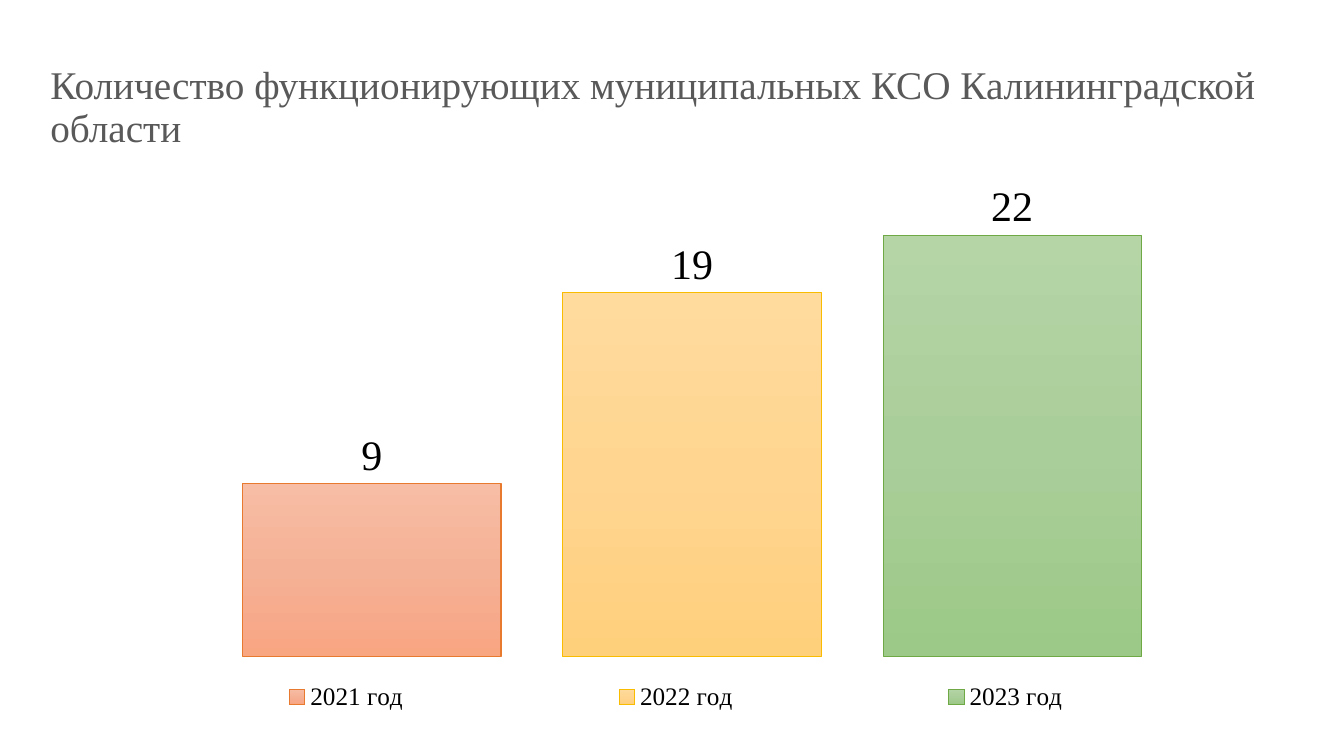
from copy import deepcopy

from lxml import etree
from pptx import Presentation
from pptx.chart.data import CategoryChartData
from pptx.dml.color import RGBColor
from pptx.enum.chart import XL_CHART_TYPE, XL_LABEL_POSITION, XL_LEGEND_POSITION
from pptx.enum.text import MSO_ANCHOR, MSO_AUTO_SIZE, PP_ALIGN
from pptx.oxml.ns import qn
from pptx.util import Inches, Pt

COLUMN_CLUSTERED = XL_CHART_TYPE.COLUMN_CLUSTERED
OUTSIDE_END = XL_LABEL_POSITION.OUTSIDE_END
LEGEND_BOTTOM = XL_LEGEND_POSITION.BOTTOM
MIDDLE = MSO_ANCHOR.MIDDLE
NO_AUTOSIZE = MSO_AUTO_SIZE.NONE
LEFT = PP_ALIGN.LEFT

FONT = "Times New Roman"
COLORS = {"title": "595959", "text": "000000"}
YEARS = [
    ("2021 год", 9, ["F7BDA5", "F5B196", "F8A582"], "E87A30"),
    ("2022 год", 19, ["FFDB9E", "FFD590", "FFD07C"], "F9BC00"),
    ("2023 год", 22, ["B5D5A7", "AACE9A", "9CC987"], "6EA945"),
]


def write_text(shape, text, size, color, align=LEFT, line_spacing=1.0):
    frame = shape.text_frame
    frame.word_wrap = True
    frame.auto_size = NO_AUTOSIZE
    frame.vertical_anchor = MIDDLE
    paragraph = frame.paragraphs[0]
    paragraph.alignment = align
    paragraph.line_spacing = line_spacing
    run = paragraph.add_run()
    run.text = text
    run.font.name = FONT
    run.font.size = Pt(size)
    run.font.color.rgb = RGBColor.from_string(color)


def set_layout(element, following, x, y, width, height, inner=False):
    """Place a chart part by fractions of the chart, before the given child tag."""
    for previous in element.findall(qn("c:layout")):
        element.remove(previous)
    layout = etree.Element(qn("c:layout"))
    manual = etree.SubElement(layout, qn("c:manualLayout"))
    settings = [("layoutTarget", "inner")] if inner else []
    settings += [("xMode", "edge"), ("yMode", "edge"),
                 ("x", x), ("y", y), ("w", width), ("h", height)]
    for tag, value in settings:
        etree.SubElement(manual, qn(f"c:{tag}")).set("val", str(value))
    element.find(qn(following)).addprevious(layout)


presentation = Presentation()
presentation.slide_width = Inches(13.33)
presentation.slide_height = Inches(7.5)
slide = presentation.slides.add_slide(presentation.slide_layouts[5])

title = slide.shapes.title
title.left, title.top = Inches(0.4), Inches(0.4)
title.width, title.height = Inches(12.46), Inches(1.35)
write_text(title, "Количество функционирующих муниципальных КСО Калининградской области",
           size=28, color=COLORS["title"], line_spacing=0.9)

chart_data = CategoryChartData()
chart_data.categories = ["1"]
for name, count, _, _ in YEARS:
    chart_data.add_series(name, [count])
chart = slide.shapes.add_chart(COLUMN_CLUSTERED, Inches(0.81), Inches(1.63),
                               Inches(11.79), Inches(5.56), chart_data).chart
chart.has_title = False
chart.font.name = "Calibri"
chart.font.size = Pt(10)
chart.font.color.rgb = RGBColor.from_string(COLORS["text"])

value_axis = chart.value_axis
value_axis.minimum_scale = 0
value_axis.maximum_scale = 25
value_axis.has_major_gridlines = False
value_axis.visible = False
chart.category_axis.visible = False

plot = chart.plots[0]
plot.gap_width = 100
plot.overlap = -24
plot.vary_by_categories = False

for series, (_, _, gradient, outline) in zip(plot.series, YEARS):
    fill = series.format.fill
    fill.gradient()
    fill.gradient_angle = 270
    stops = series.format.fill.gradient_stops
    first_stop = series._element.find(f".//{qn('a:gs')}")
    first_stop.addnext(deepcopy(first_stop))
    stops = fill.gradient_stops
    for stop, position, color in zip(stops, (0, 0.5, 1), gradient):
        stop.position = position
        stop.color.rgb = RGBColor.from_string(color)
    series.format.line.color.rgb = RGBColor.from_string(outline)
    series.format.line.width = Pt(0.75)

    labels = series.data_labels
    labels.show_value = True
    labels.position = OUTSIDE_END
    labels.font.name = FONT
    labels.font.size = Pt(30)
    labels.font.color.rgb = RGBColor.from_string(COLORS["text"])

chart.has_legend = True
legend = chart.legend
legend.position = LEGEND_BOTTOM
legend.include_in_layout = False
legend.font.name = FONT
legend.font.size = Pt(18)
legend.font.color.rgb = RGBColor.from_string(COLORS["text"])

plot_area = chart._chartSpace.find(f".//{qn('c:plotArea')}")
set_layout(plot_area, "c:barChart", 0.027, 0.024, 0.973, 0.854, inner=True)
set_layout(legend._element, "c:overlay", 0, 0.9, 1, 0.1)

presentation.save("out.pptx")
